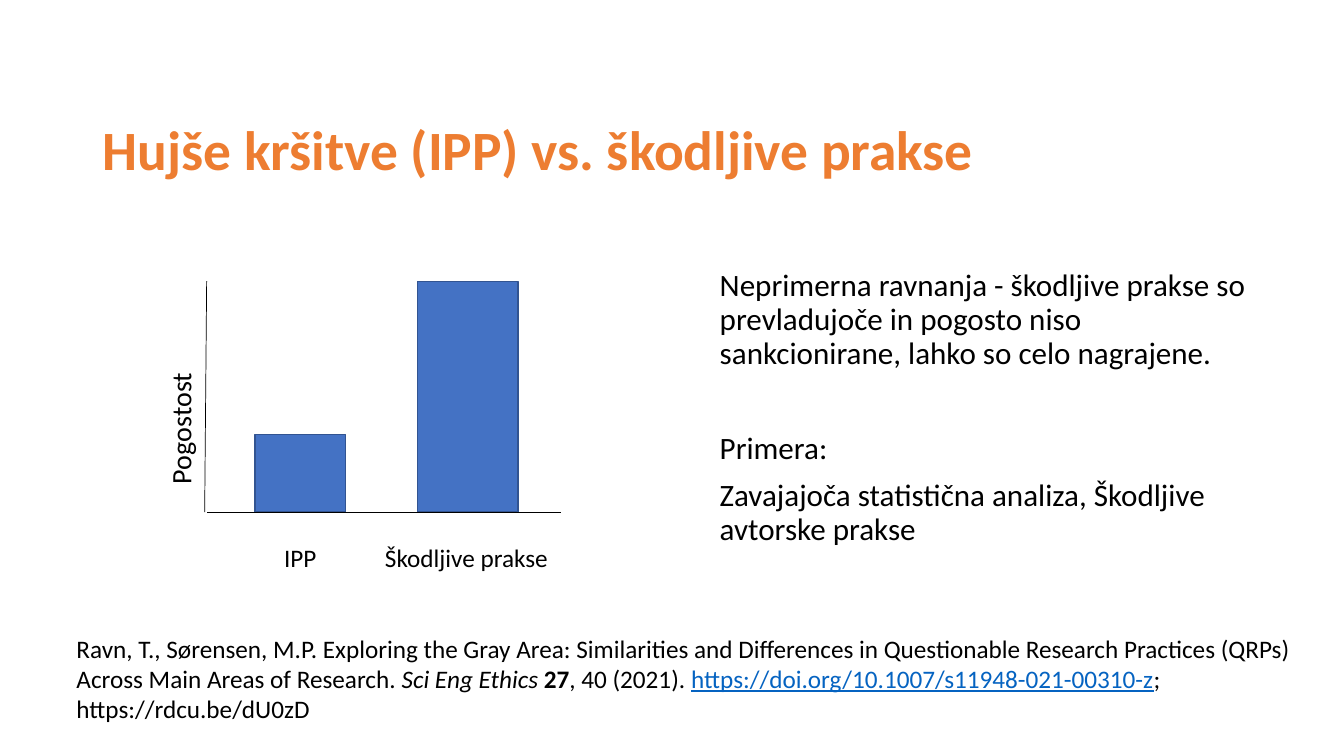
from dataclasses import dataclass

from lxml import etree
from pptx import Presentation
from pptx.dml.color import RGBColor
from pptx.enum.shapes import MSO_CONNECTOR as Connector, MSO_SHAPE as Shape
from pptx.enum.text import MSO_ANCHOR as Anchor, MSO_AUTO_SIZE as AutoSize, PP_ALIGN as Align
from pptx.oxml.ns import qn
from pptx.util import Inches, Pt


@dataclass(frozen=True)
class Theme:
    font: str = "Calibri"
    title: str = "ED7D31"
    text: str = "000000"
    link: str = "0563C1"
    bar: str = "4472C4"
    bar_edge: str = "325491"
    title_size: float = 39.6
    body_size: float = 22.2
    axis_size: float = 20
    small_size: float = 18


THEME = Theme()


def add_text(paragraph, text, size, color=THEME.text, bold=False, italic=False, underline=False):
    run = paragraph.add_run()
    run.text = text
    font = run.font
    font.name, font.size = THEME.font, Pt(size)
    font.bold, font.italic, font.underline = bold, italic, underline
    font.color.rgb = RGBColor.from_string(color)


def add_tab_stop(paragraph, position):
    properties = paragraph._p.get_or_add_pPr()
    tabs = etree.SubElement(properties, qn("a:tabLst"))
    etree.SubElement(tabs, qn("a:tab"), pos=str(position), algn="l")


class SlideBuilder:
    def __init__(self, presentation, theme):
        self.theme = theme
        self.slide = presentation.slides.add_slide(presentation.slide_layouts[5])

    def title(self, text, left, top, width, height):
        shape = self.slide.shapes.title
        shape.left, shape.top = Inches(left), Inches(top)
        shape.width, shape.height = Inches(width), Inches(height)
        frame = shape.text_frame
        frame.auto_size = AutoSize.NONE
        frame.vertical_anchor = Anchor.MIDDLE
        paragraph = frame.paragraphs[0]
        paragraph.alignment = Align.LEFT
        paragraph.line_spacing = 0.9
        add_text(paragraph, text, self.theme.title_size, color=self.theme.title, bold=True)

    def text_box(self, left, top, width, height, wrap=True, rotation=0):
        box = self.slide.shapes.add_textbox(Inches(left), Inches(top), Inches(width), Inches(height))
        box.rotation = rotation
        box.text_frame.word_wrap = wrap
        return box.text_frame

    def bar(self, left, width, height, baseline):
        shape = self.slide.shapes.add_shape(
            Shape.RECTANGLE, Inches(left), Inches(baseline - height), Inches(width), Inches(height))
        shape.shadow.inherit = False
        shape.fill.solid()
        shape.fill.fore_color.rgb = RGBColor.from_string(self.theme.bar)
        shape.line.color.rgb = RGBColor.from_string(self.theme.bar_edge)
        shape.line.width = Pt(1)

    def axis(self, x1, y1, x2, y2):
        line = self.slide.shapes.add_connector(
            Connector.STRAIGHT, Inches(x1), Inches(y1), Inches(x2), Inches(y2))
        line.line.color.rgb = RGBColor.from_string(self.theme.text)
        line.line.width = Pt(0.5)
        etree.SubElement(line._element.spPr, qn("a:effectLst"))


def main():
    presentation = Presentation()
    presentation.slide_width, presentation.slide_height = Inches(13.33), Inches(7.5)
    builder = SlideBuilder(presentation, THEME)

    builder.title("Hujše kršitve (IPP) vs. škodljive prakse", 0.92, 1.18, 12.2, 0.67)

    body = builder.text_box(7.04, 2.63, 5.64, 2.99)
    statements = [
        ("Neprimerna ravnanja - škodljive prakse so prevladujoče in pogosto niso "
         "sankcionirane, lahko so celo nagrajene.", 0),
        ("Primera:", 44),
        ("Zavajajoča statistična analiza, Škodljive avtorske prakse", 10),
    ]
    for index, (text, space_before) in enumerate(statements):
        paragraph = body.add_paragraph() if index else body.paragraphs[0]
        paragraph.line_spacing = 0.9
        paragraph.space_before = Pt(space_before)
        add_text(paragraph, text, THEME.body_size)

    baseline, axis_top, axis_left = 5.08, 2.79, 2.05
    for left, width, height in [(2.53, 0.9, 0.77), (4.14, 1, 2.29)]:
        builder.bar(left, width, height, baseline)
    builder.axis(axis_left, axis_top, axis_left - 0.02, baseline)
    builder.axis(5.56, baseline, axis_left, baseline)

    frequency = builder.text_box(0.83, 3.72, 1.92, 0.44, rotation=270).paragraphs[0]
    add_text(frequency, "Pogostost", THEME.axis_size)

    categories = builder.text_box(2.72, 5.33, 2.84, 0.4, wrap=False).paragraphs[0]
    categories.alignment = Align.LEFT
    add_tab_stop(categories, Inches(1))
    add_text(categories, "IPP\tŠkodljive prakse", THEME.small_size)

    reference = builder.text_box(0.66, 6.23, 12.32, 1.01).paragraphs[0]
    for text, style in [
        ("Ravn, T., Sørensen, M.P. Exploring the Gray Area: Similarities and Differences in "
         "Questionable Research Practices (QRPs) Across Main Areas of Research. ", {}),
        ("Sci Eng Ethics ", {"italic": True}),
        ("27", {"bold": True}),
        (", 40 (2021). ", {}),
        ("https://doi.org/10.1007/s11948-021-00310-z", {"color": THEME.link, "underline": True}),
        ("; https://rdcu.be/dU0zD", {}),
    ]:
        add_text(reference, text, THEME.small_size, **style)

    presentation.save("out.pptx")


if __name__ == "__main__":
    main()
